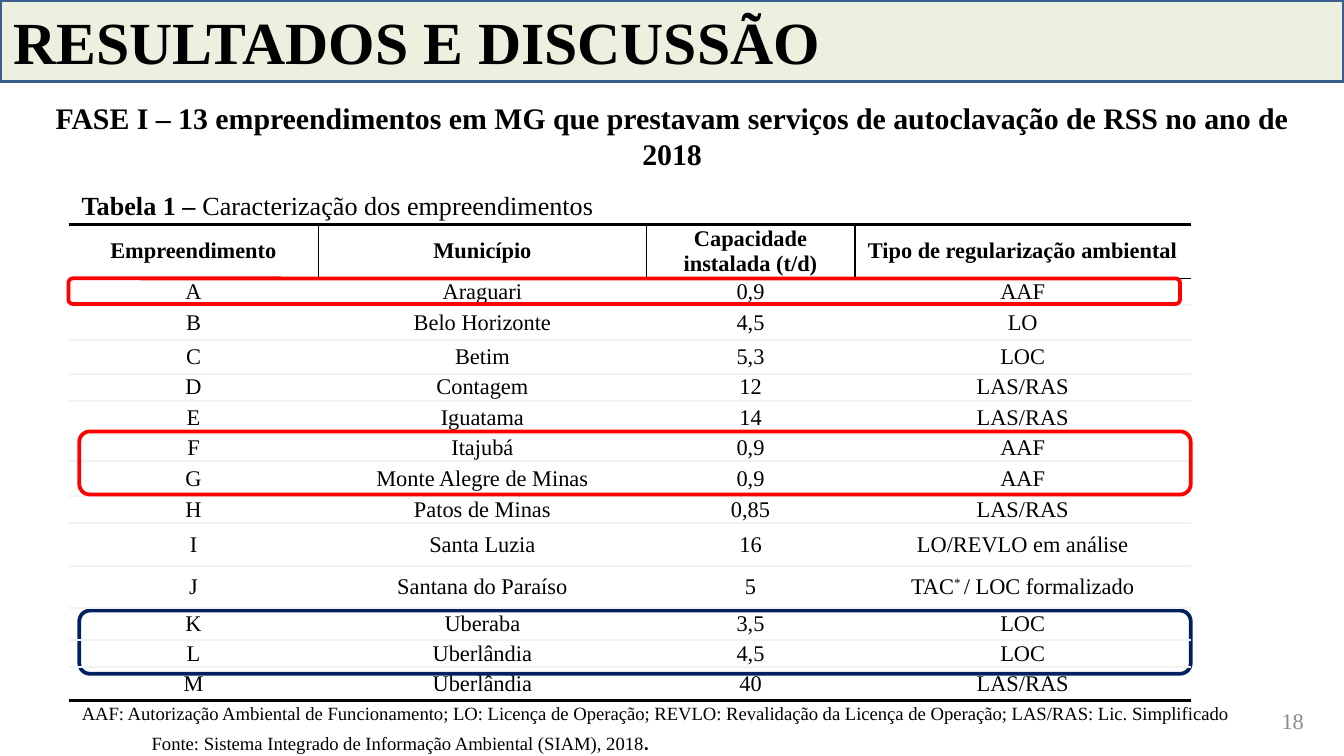
"""Builds the results slide with the table of autoclaving enterprises."""
from itertools import product

from lxml.etree import SubElement
from pptx import Presentation
from pptx.dml.color import RGBColor
from pptx.enum.shapes import MSO_SHAPE
from pptx.enum.text import MSO_ANCHOR, PP_ALIGN
from pptx.oxml.ns import qn
from pptx.util import Inches, Pt

COLORS = {"ink": "000000", "gray": "8C8C8C", "pale": "F2F2F2", "navy": "002060",
          "red": "FF0000", "cream": "EBF1DE", "steel": "3A5F8C"}
LEFT, CENTER, RIGHT = PP_ALIGN.LEFT, PP_ALIGN.CENTER, PP_ALIGN.RIGHT
TOP, MIDDLE = MSO_ANCHOR.TOP, MSO_ANCHOR.MIDDLE

deck = Presentation()
deck.slide_width = Inches(10)
deck.slide_height = deck.slide_width * 9 // 16
slide = deck.slides.add_slide(deck.slide_layouts[6])
shapes = slide.shapes
col, row = deck.slide_width / 100, deck.slide_height / 100


def grid(x, y, wide, high):
    return [round(n) for n in (x * col, y * row, wide * col, high * row)]


def write(line, *parts, size=12, bold=False, color="ink", font="Times New Roman",
          align=LEFT, indent=0):
    line.alignment = align
    if indent:
        line._p.get_or_add_pPr().set("marL", str(round(indent * col)))
    for part in parts:
        text, own = part if isinstance(part, tuple) else (part, {})
        run = line.add_run()
        run.text = text
        run.font.size = Pt(own.get("size", size))
        run.font.bold = own.get("bold", bold)
        run.font.name = own.get("font", font)
        run.font.color.rgb = RGBColor.from_string(COLORS[color])
        if "raise" in own:
            run._r.get_or_add_rPr().set("baseline", str(own["raise"] * 1000))


note = ("AAF: Autorização Ambiental de Funcionamento; LO: Licença de Operação; "
        "REVLO: Revalidação da Licença de Operação; LAS/RAS: Lic. Simplificado")
source = "Fonte: Sistema Integrado de Informação Ambiental (SIAM), 2018"
phase = ("FASE I – 13 empreendimentos em MG que prestavam serviços de "
         "autoclavação de RSS no ano de 2018")
texts = [
    ((2.05, 12.28, 95.9, 11.39), TOP,
     [([phase], {"size": 16, "bold": True, "align": CENTER})]),
    ((5.1, 24.2, 87.4, 6.05), TOP,
     [([("Tabela 1 – ", {"bold": True}), "Caracterização dos empreendimentos"],
       {"size": 14})]),
    ((5.1, 92, 89.8, 8.9), TOP,
     [([note], {"size": 10}),
      ([source, (".", {"size": 14, "font": "Calibri"})], {"size": 10, "indent": 5.2})]),
    ((89.7, 92.7, 8.3, 5.34), MIDDLE, [(["18"], {"color": "gray", "align": RIGHT})]),
]
for at, anchor, lines in texts:
    frame = shapes.add_textbox(*grid(*at)).text_frame
    frame.word_wrap, frame.vertical_anchor = True, anchor
    for i, (parts, style) in enumerate(lines):
        line = frame.add_paragraph() if i else frame.paragraphs[0]
        write(line, *parts, **style)

cells = [
    ["Empreendimento", "Município", "Capacidade instalada (t/d)",
     "Tipo de regularização ambiental"],
    ["A", "Araguari", "0,9", "AAF"],
    ["B", "Belo Horizonte", "4,5", "LO"],
    ["C", "Betim", "5,3", "LOC"],
    ["D", "Contagem", "12", "LAS/RAS"],
    ["E", "Iguatama", "14", "LAS/RAS"],
    ["F", "Itajubá", "0,9", "AAF"],
    ["G", "Monte Alegre de Minas", "0,9", "AAF"],
    ["H", "Patos de Minas", "0,85", "LAS/RAS"],
    ["I", "Santa Luzia", "16", "LO/REVLO em análise"],
    ["J", "Santana do Paraíso", "5", ["TAC", ("* ", {"raise": 30}), "/ LOC formalizado"]],
    ["K", "Uberaba", "3,5", "LOC"],
    ["L", "Uberlândia", "4,5", "LOC"],
    ["M", "Uberlândia", "40", "LAS/RAS"],
]
widths = [18.6, 24.4, 15.5, 25]
heights = [6.41, 3.38, 4.63, 4.45, 3.38, 4.45, 3.38, 4.63, 3.38, 5.69, 5.52, 4.27, 3.2, 4.45]
last, edge = len(cells) - 1, len(widths) - 1
holder = shapes.add_table(len(cells), len(widths),
                          *grid(5.1, 29.7, sum(widths), sum(heights)))
table = holder.table
table.first_row = table.horz_banding = False
for i, wide in enumerate(widths):
    table.columns[i].width = round(wide * col)
for i, high in enumerate(heights):
    table.rows[i].height = round(high * row)

rules = {0: ("ink", 1.5), 1: ("ink", 1), last + 1: ("ink", 1.5)}
for r, c in product(range(last + 1), range(edge + 1)):
    cell, value = table.cell(r, c), cells[r][c]
    parts = value if isinstance(value, list) else [value]
    write(cell.text_frame.paragraphs[0], *parts, bold=r == 0, align=CENTER)
    cell.vertical_anchor = MIDDLE
    cell.margin_left = cell.margin_right = Inches(0.06)
    cell.margin_top = cell.margin_bottom = 0
    props = cell._tc.get_or_add_tcPr()
    sides = {"lnL": ("ink", 1) if r == 0 and c > 0 else None,
             "lnR": ("ink", 1) if r == 0 and c < edge else None,
             "lnT": rules.get(r, ("pale", 1)),
             "lnB": rules.get(r + 1, ("pale", 1))}
    for side, rule in sides.items():
        line = SubElement(props, qn("a:" + side))
        if rule:
            line.set("w", str(Pt(rule[1])))
            fill = SubElement(line, qn("a:solidFill"))
            SubElement(fill, qn("a:srgbClr")).set("val", COLORS[rule[0]])
        else:
            SubElement(line, qn("a:noFill"))
    cell.fill.background()

frames = {
    "large": (MSO_SHAPE.ROUNDED_RECTANGLE, (5.9, 80.78, 82.7, 8.36), "navy", None),
    "pair": (MSO_SHAPE.ROUNDED_RECTANGLE, (5.9, 57.07, 82.7, 8.36), "red", None),
    "title": (MSO_SHAPE.RECTANGLE, (0, 0, 100, 10.8), "steel", "cream"),
    "first": (MSO_SHAPE.ROUNDED_RECTANGLE, (5.1, 36.83, 82.7, 3.38), "red", None),
}
made = {}
for name, (kind, at, line, fill) in frames.items():
    shape = made[name] = shapes.add_shape(kind, *grid(*at))
    shape.shadow.inherit = False
    shape.line.color.rgb = RGBColor.from_string(COLORS[line])
    shape.line.width = Pt(2)
    if fill:
        shape.fill.solid()
        shape.fill.fore_color.rgb = RGBColor.from_string(COLORS[fill])
    else:
        shape.fill.background()
holder._element.addprevious(made["large"]._element)

banner = made["title"].text_frame
banner.vertical_anchor = MIDDLE
write(banner.paragraphs[0], "RESULTADOS E DISCUSSÃO", size=32, bold=True)

deck.save("out.pptx")
